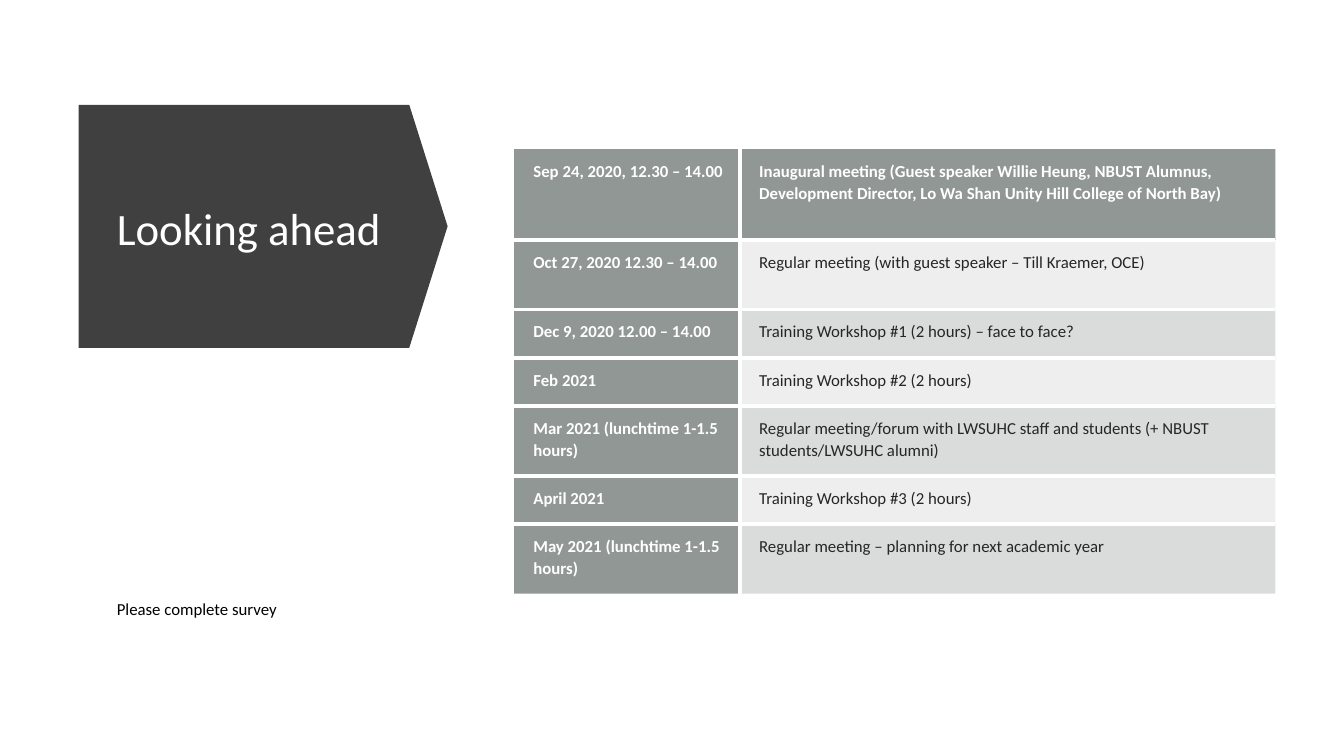
from lxml.etree import SubElement
from pptx import Presentation
from pptx.dml.color import RGBColor
from pptx.enum.shapes import MSO_SHAPE
from pptx.enum.text import MSO_ANCHOR
from pptx.oxml import parse_xml
from pptx.oxml.ns import nsdecls, qn
from pptx.util import Inches, Pt

# Content
TITLE = "Looking ahead"
REMINDER = "Please complete survey"
SCHEDULE = [  # date, event, row height
    ("Sep 24, 2020, 12.30 – 14.00",
     "Inaugural meeting (Guest speaker Willie Heung, NBUST Alumnus, "
     "Development Director, Lo Wa Shan Unity Hill College of North Bay)", 0.9),
    ("Oct 27, 2020 12.30 – 14.00",
     "Regular meeting (with guest speaker – Till Kraemer, OCE)", 0.69),
    ("Dec 9, 2020 12.00 – 14.00",
     "Training Workshop #1 (2 hours) – face to face?", 0.48),
    ("Feb 2021", "Training Workshop #2 (2 hours)", 0.48),
    ("Mar 2021 (lunchtime 1-1.5 hours)",
     "Regular meeting/forum with LWSUHC staff and students "
     "(+ NBUST students/LWSUHC alumni)", 0.69),
    ("April 2021", "Training Workshop #3 (2 hours)", 0.48),
    ("May 2021 (lunchtime 1-1.5 hours)",
     "Regular meeting – planning for next academic year", 0.69),
]

# Layout, in inches
BANNER = (0.78, 1.04, 3.66, 2.41)
BANNER_POINT = 0.38
TEXT_LEFT, TEXT_WIDTH = 1.06, 2.92
TABLE_LEFT, TABLE_TOP = 5.1, 1.48
COLUMN_WIDTHS = (2.24, 5.31)

# Colours
WHITE, BLACK, CHARCOAL, INK = "FFFFFF", "000000", "404040", "262626"
HEADER_FILL = ("636B68", 70)  # colour, opacity in percent
BAND_FILLS = [("878E8B", 30), ("878E8B", 15)]


def set_fill(fill, colour, opacity=100):
    fill.solid()
    fill.fore_color.rgb = RGBColor.from_string(colour)
    if opacity < 100:
        colour_element = fill._xPr.find(qn("a:solidFill"))[0]
        SubElement(colour_element, qn("a:alpha"), val=str(opacity * 1000))


def write_text(frame, text, size=12, colour=BLACK, bold=False,
               line_spacing=0.9, space_after=0):
    frame.word_wrap = True
    paragraph = frame.paragraphs[0]
    paragraph.line_spacing = line_spacing
    paragraph.space_after = Pt(space_after)
    run = paragraph.add_run()
    run.text = text
    run.font.name, run.font.size, run.font.bold = "Calibri", Pt(size), bold
    run.font.color.rgb = RGBColor.from_string(colour)


def add_label(slide, top, height, text, anchor, **text_format):
    box = slide.shapes.add_textbox(*map(Inches, (TEXT_LEFT, top, TEXT_WIDTH, height)))
    box.text_frame.vertical_anchor = anchor
    write_text(box.text_frame, text, **text_format)
    return box


def set_borders(cell, visible_sides):
    properties = cell._tc.get_or_add_tcPr()
    for position, side in enumerate("LRTB"):
        paint = "<a:noFill/>"
        if side in visible_sides:
            paint = f'<a:solidFill><a:srgbClr val="{WHITE}"/></a:solidFill>'
        line = parse_xml(f'<a:ln{side} {nsdecls("a")} w="{Pt(3)}">{paint}</a:ln{side}>')
        properties.insert(position, line)


def add_banner(slide):
    banner = slide.shapes.add_shape(MSO_SHAPE.PENTAGON, *map(Inches, BANNER))
    banner.adjustments[0] = BANNER_POINT / BANNER[3]
    banner.shadow.inherit = False
    banner.line.fill.background()
    set_fill(banner.fill, CHARCOAL)


def add_schedule(slide):
    heights = [row[2] for row in SCHEDULE]
    frame = slide.shapes.add_table(
        len(SCHEDULE), len(COLUMN_WIDTHS),
        *map(Inches, (TABLE_LEFT, TABLE_TOP, sum(COLUMN_WIDTHS), sum(heights))))
    table = frame.table
    table.horz_banding = False
    for column, width in zip(table.columns, COLUMN_WIDTHS):
        column.width = Inches(width)

    for row_index, (date, event, height) in enumerate(SCHEDULE):
        table.rows[row_index].height = Inches(height)
        # Only the lines between cells are drawn
        row_sides = "T" * (row_index > 0) + "B" * (row_index < len(SCHEDULE) - 1)
        for column_index, text in enumerate((date, event)):
            cell = table.cell(row_index, column_index)
            is_header = row_index == 0 or column_index == 0
            cell.margin_left = Inches(0.19)
            cell.margin_right = cell.margin_top = cell.margin_bottom = Inches(0.11)
            write_text(cell.text_frame, text, colour=WHITE if is_header else INK,
                       bold=is_header, line_spacing=1.07, space_after=8)
            set_fill(cell.fill, *(HEADER_FILL if is_header else BAND_FILLS[row_index % 2]))
            set_borders(cell, row_sides + "RL"[column_index])


def main():
    presentation = Presentation()
    presentation.slide_width, presentation.slide_height = Inches(13.33), Inches(7.5)
    slide = presentation.slides.add_slide(presentation.slide_layouts[6])

    # Title banner and reminder
    add_banner(slide)
    add_label(slide, 1.32, 1.95, TITLE, MSO_ANCHOR.MIDDLE, size=32, colour=WHITE)
    reminder = add_label(slide, 3.67, 2.65, REMINDER, MSO_ANCHOR.BOTTOM)
    reminder.text_frame.margin_bottom = Inches(0.18)

    # Meeting schedule
    add_schedule(slide)
    presentation.save("out.pptx")


if __name__ == "__main__":
    main()
